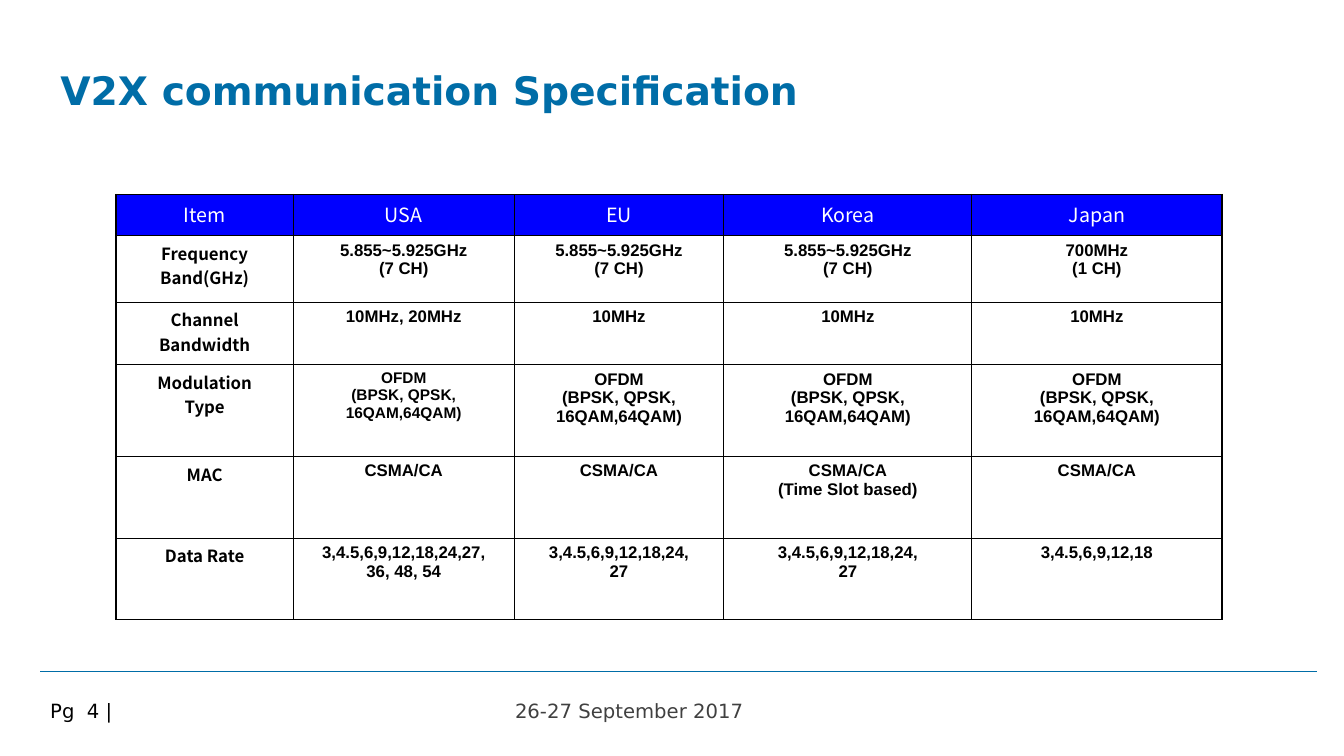
from lxml.etree import SubElement as Sub
from pptx import Presentation
from pptx.dml.color import RGBColor as RGB
from pptx.enum.shapes import MSO_CONNECTOR as Conn
from pptx.enum.text import PP_ALIGN as Align
from pptx.oxml.ns import qn
from pptx.util import Inches, Pt

HEAD = {"name": "Noto Sans CJK KR", "size": Pt(14), "bold": False}
LABEL = {"name": "Noto Sans CJK KR", "size": Pt(12), "bold": True}
VALUE = {"name": "Arial", "size": Pt(12), "bold": True}
SMALL = {**VALUE, "size": Pt(11)}
TITLE = {"name": "DejaVu Sans", "size": Pt(28), "bold": True}
FOOT = {"name": "DejaVu Sans", "size": Pt(14), "bold": False}

COLS = [1.76, 2.19, 2.08, 2.46, 2.48]
ROWS = [0.41, 0.66, 0.62, 0.91, 0.81, 0.81]
BAND = "5.855~5.925GHz\n(7 CH)"
OFDM = "OFDM\n(BPSK, QPSK, 16QAM,64QAM)"
RATE = "3,4.5,6,9,12,18,24,\n27"
DATA = [
    ["Item", "USA", "EU", "Korea", "Japan"],
    ["Frequency Band(GHz)", BAND, BAND, BAND, "700MHz\n(1 CH)"],
    ["Channel\nBandwidth", "10MHz, 20MHz", "10MHz", "10MHz", "10MHz"],
    ["Modulation\nType", OFDM, OFDM, OFDM, OFDM],
    ["MAC", "CSMA/CA", "CSMA/CA", "CSMA/CA\n(Time Slot based)", "CSMA/CA"],
    ["Data Rate", "3,4.5,6,9,12,18,24,27,\n36, 48, 54", RATE, RATE, "3,4.5,6,9,12,18"],
]


def color(code):
    return RGB.from_string(code)


def style(para, form, code):
    for key, val in form.items():
        setattr(para.font, key, val)
    para.font.color.rgb = color(code)


def add_text(slide, text, place, form, code, space=1.0, inset=(0.1, 0.05, 0.1, 0.05)):
    frame = slide.shapes.add_textbox(*map(Inches, place)).text_frame
    frame.word_wrap = True
    for side, val in zip(("left", "top", "right", "bottom"), inset):
        setattr(frame, f"margin_{side}", Inches(val))
    frame.text = text
    para = frame.paragraphs[0]
    para.line_spacing = space
    style(para, form, code)


def add_rule(slide, start, end, code, width):
    rule = slide.shapes.add_connector(Conn.STRAIGHT, *map(Inches, start + end))
    rule.line.color.rgb = color(code)
    rule.line.width = Pt(width)
    Sub(rule._element.spPr, qn("a:effectLst"))


def add_edges(cell, code, width):
    props = cell._tc.get_or_add_tcPr()
    for side in "LRTB":
        edge = Sub(props, qn(f"a:ln{side}"), w=str(Pt(width)))
        Sub(Sub(edge, qn("a:solidFill")), qn("a:srgbClr"), val=code)


def fill_cell(cell, text, form, ink, back):
    cell.margin_left = cell.margin_right = Inches(0.13)
    cell.margin_top = cell.margin_bottom = Inches(0.05)
    add_edges(cell, "000000", 1)
    cell.fill.solid()
    cell.fill.fore_color.rgb = color(back)
    cell.text = text
    for para in cell.text_frame.paragraphs:
        para.alignment = Align.CENTER
        style(para, form, ink)


def cell_form(row, col, text):
    if row == 0:
        return HEAD
    if col == 0:
        return LABEL
    return SMALL if text == OFDM and col == 1 else VALUE


def add_grid(slide, left, top):
    size = map(Inches, (left, top, sum(COLS), sum(ROWS)))
    table = slide.shapes.add_table(len(ROWS), len(COLS), *size).table
    for col, width in zip(table.columns, COLS):
        col.width = Inches(width)
    for row, height in zip(table.rows, ROWS):
        row.height = Inches(height)
    for r, line in enumerate(DATA):
        ink, back = ("000000", "FFFFFF") if r else ("FFFFFF", "0000FF")
        for c, text in enumerate(line):
            fill_cell(table.cell(r, c), text, cell_form(r, c, text), ink, back)


def main():
    deck = Presentation()
    deck.slide_width, deck.slide_height = Inches(13.33), Inches(7.5)
    slide = deck.slides.add_slide(deck.slide_layouts[6])
    add_rule(slide, (0.4, 6.66), (13.06, 6.66), "006DA7", 0.75)
    add_text(slide, "26-27 September 2017", (5.01, 6.88, 3.86, 0.34), FOOT, "404040")
    add_text(slide, "Pg  4 |", (0.4, 6.91, 2.76, 0.39), FOOT, "000000", 0.93)
    add_text(slide, "V2X communication Specification", (0.6, 0.68, 12.06, 0.71),
             TITLE, "006DA7", 0.94, (0, 0.02, 0, 0))
    add_grid(slide, 1.15, 1.93)
    deck.save("out.pptx")


if __name__ == "__main__":
    main()
